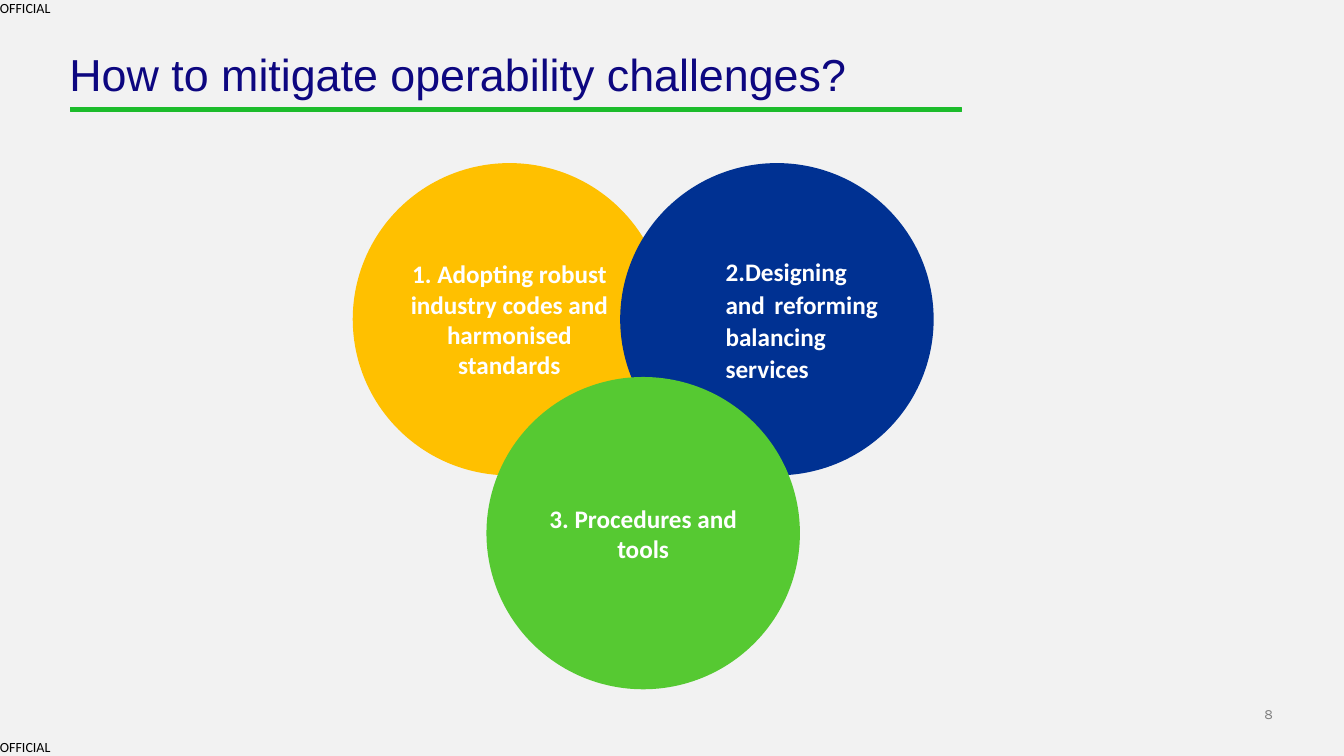
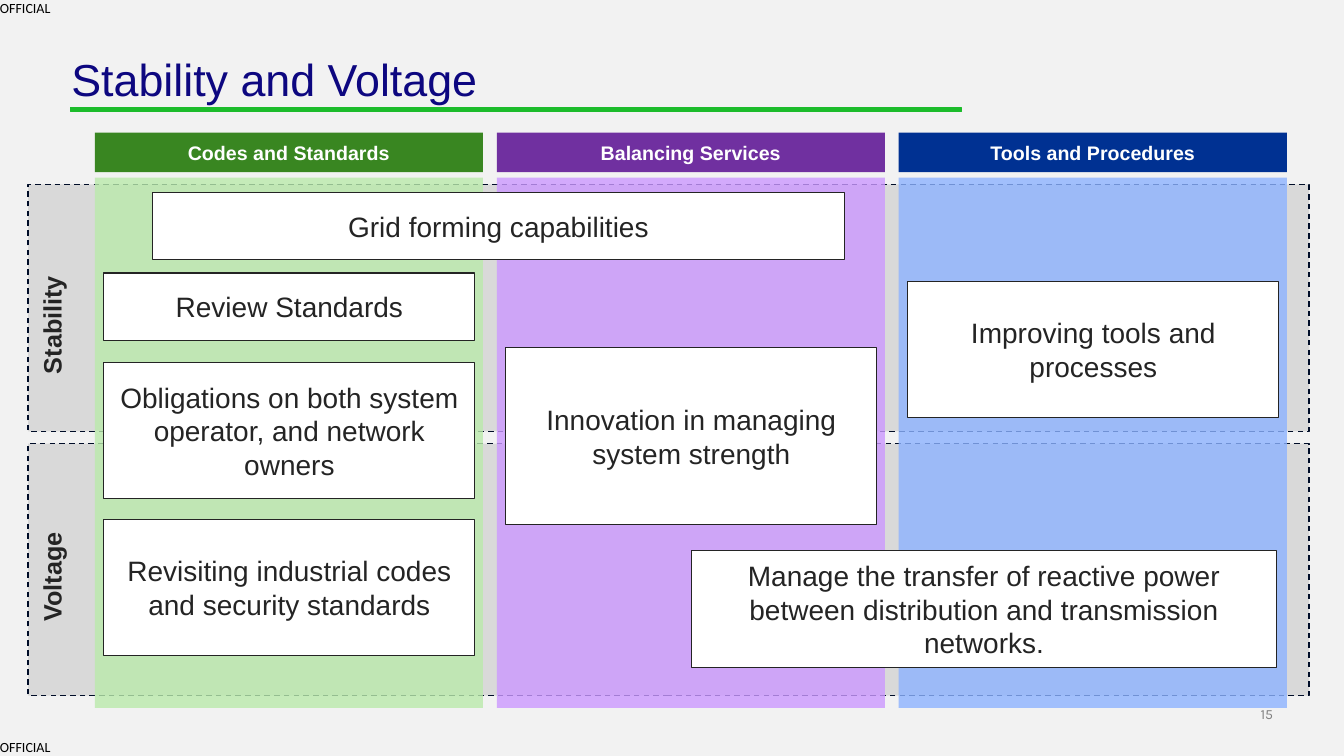
from dataclasses import dataclass

import lxml.etree
import pptx
import pptx.dml.color
import pptx.enum.dml
import pptx.enum.shapes
import pptx.enum.text
import pptx.oxml.ns
import pptx.shapes.autoshape
import pptx.slide
import pptx.util

Cm = pptx.util.Cm
Pt = pptx.util.Pt
RGBColor = pptx.dml.color.RGBColor
Align = pptx.enum.text.PP_ALIGN
Anchor = pptx.enum.text.MSO_ANCHOR
Preset = pptx.enum.shapes.MSO_SHAPE

# Colours
PAPER = RGBColor(0xF2, 0xF2, 0xF2)
BLACK = RGBColor(0x00, 0x00, 0x00)
WHITE = RGBColor(0xFF, 0xFF, 0xFF)
INK = RGBColor(0x24, 0x24, 0x24)
GREY = RGBColor(0x7F, 0x7F, 0x7F)
BAND_GREY = RGBColor(0xD9, 0xD9, 0xD9)
BAND_EDGE = RGBColor(0x00, 0x0D, 0x28)
TITLE_BLUE = RGBColor(0x0D, 0x07, 0x80)
RULE_GREEN = RGBColor(0x1C, 0xBC, 0x2B)
AMBER = RGBColor(0xFF, 0xC0, 0x00)
NAVY = RGBColor(0x00, 0x31, 0x92)
GREEN = RGBColor(0x56, 0xC9, 0x32)
DARK_GREEN = RGBColor(0x39, 0x86, 0x21)
PURPLE = RGBColor(0x70, 0x30, 0xA0)
PALE_GREEN = RGBColor(0xBA, 0xEA, 0xAB)
PALE_PURPLE = RGBColor(0xCC, 0x99, 0xFF)
PALE_BLUE = RGBColor(0x8D, 0xB3, 0xFF)


@dataclass(frozen=True)
class Area:
    """A rectangle in centimetres."""
    left: float
    top: float
    width: float
    height: float

    def lengths(self) -> tuple[int, int, int, int]:
        return Cm(self.left), Cm(self.top), Cm(self.width), Cm(self.height)


@dataclass(frozen=True)
class Style:
    font: str
    size: float
    colour: RGBColor
    bold: bool = False
    align: Align = Align.CENTER


@dataclass(frozen=True)
class Circle:
    text: str
    left: float
    top: float
    colour: RGBColor


@dataclass(frozen=True)
class Band:
    text: str
    top: float
    height: float
    label_middle: float


@dataclass(frozen=True)
class Column:
    heading: str
    colour: RGBColor
    tint: RGBColor


@dataclass(frozen=True)
class Card:
    text: str
    area: Area


TITLE = Style("Arial", 32, TITLE_BLUE, align=Align.LEFT)
MARKING = Style("Calibri", 10, BLACK, align=Align.LEFT)
NUMBER = Style("Karla", 10, GREY, align=Align.RIGHT)
CIRCLE_TEXT = Style("Calibri", 18, WHITE, bold=True)
BAND_TEXT = Style("Arial", 18, INK, bold=True)
HEADING = Style("Arial", 14, WHITE, bold=True)
CARD_TEXT = Style("Arial", 20, INK)

# Circles
CIRCLE_WIDTH, CIRCLE_HEIGHT = 7.9, 7.87
CIRCLE_LEFT, CIRCLE_TOP = 8.89, 4.11
CIRCLE_PITCH, CIRCLE_DROP = 6.74, 5.39
CIRCLES = [
    Circle("1. Adopting robust industry codes and harmonised standards",
           CIRCLE_LEFT, CIRCLE_TOP, AMBER),
    Circle("2.Designing and reforming balancing services",
           CIRCLE_LEFT + CIRCLE_PITCH, CIRCLE_TOP, NAVY),
    Circle("3. Procedures and tools",
           CIRCLE_LEFT + CIRCLE_PITCH / 2, CIRCLE_TOP + CIRCLE_DROP, GREEN),
]

# Matrix of bands, columns and cards
BANDS = [Band("Voltage", 11.18, 6.35, 14.54), Band("Stability", 4.65, 6.22, 8.19)]
BAND_LEFT, BAND_WIDTH = 0.71, 32.28
LABEL_CENTRE, LABEL_WIDTH, LABEL_HEIGHT = 1.3, 5.36, 1.85
COLUMNS = [
    Column("Codes and Standards", DARK_GREEN, PALE_GREEN),
    Column("Balancing Services", PURPLE, PALE_PURPLE),
    Column("Tools and Procedures", NAVY, PALE_BLUE),
]
COLUMN_LEFT, COLUMN_WIDTH, COLUMN_PITCH = 2.39, 9.78, 10.13
CARD_WIDTH, CARD_INSET = 9.35, 0.23
LOW, TALL = 1.7, 3.43


def column_left(index: int) -> float:
    return COLUMN_LEFT + index * COLUMN_PITCH


def column_card(text: str, index: int, top: float, height: float) -> Card:
    """A card that fits inside one column."""
    return Card(text, Area(column_left(index) + CARD_INSET, top, CARD_WIDTH, height))


CARDS = [
    Card("Grid forming capabilities", Area(3.84, 4.85, 17.45, LOW)),
    column_card("Innovation in managing system strength", 1, 8.76, 4.47),
    column_card("Review Standards", 0, 6.88, LOW),
    column_card("Improving tools and processes", 2, 7.09, TALL),
    column_card("Revisiting industrial codes and security standards", 0, 13.08, TALL),
    Card("Manage the transfer of reactive power between distribution and "
         "transmission networks.", Area(17.42, 13.87, 14.76, 2.95)),
    column_card("Obligations on both system operator, and network owners", 0, 9.14, TALL),
]


def write(shape: pptx.shapes.autoshape.Shape, text: str, style: Style) -> None:
    frame = shape.text_frame
    frame.word_wrap = True
    frame.vertical_anchor = Anchor.MIDDLE
    para = frame.paragraphs[0]
    para.text = text
    para.alignment = style.align
    para.font.name = style.font
    para.font.size = Pt(style.size)
    para.font.bold = style.bold
    para.font.color.rgb = style.colour


def add_box(page: pptx.slide.Slide, area: Area, fill: RGBColor,
            preset: Preset = Preset.RECTANGLE, edge: RGBColor | None = None,
            edge_width: float = 0.75) -> pptx.shapes.autoshape.Shape:
    box = page.shapes.add_shape(preset, *area.lengths())
    box.shadow.inherit = False
    box.fill.solid()
    box.fill.fore_color.rgb = fill
    if edge is None:
        box.line.fill.background()
    else:
        box.line.color.rgb = edge
        box.line.width = Pt(edge_width)
    return box


def add_text(page: pptx.slide.Slide, area: Area, text: str,
             style: Style) -> pptx.shapes.autoshape.Shape:
    """A text box without margins, set from the top."""
    box = page.shapes.add_textbox(*area.lengths())
    write(box, text, style)
    frame = box.text_frame
    frame.vertical_anchor = Anchor.TOP
    frame.margin_left = frame.margin_right = frame.margin_top = frame.margin_bottom = 0
    return box


def set_opacity(shape: pptx.shapes.autoshape.Shape, percent: int) -> None:
    colour = shape.fill._xPr.find(".//" + pptx.oxml.ns.qn("a:srgbClr"))
    alpha = lxml.etree.SubElement(colour, pptx.oxml.ns.qn("a:alpha"))
    alpha.set("val", str(percent * 1000))


def add_page(deck, title: str, title_left: float, title_top: float,
             number: int) -> pptx.slide.Slide:
    """A page with the shared background, markings, rule and title."""
    page = deck.slides.add_slide(deck.slide_layouts[6])
    page.background.fill.solid()
    page.background.fill.fore_color.rgb = PAPER
    add_text(page, Area(31.01, 17.78, 1.07, 0.43), str(number), NUMBER)
    for top in (18.62, 0):
        add_text(page, Area(0, top, 1.35, 0.43), "OFFICIAL", MARKING)
    add_box(page, Area(1.78, 2.72, 22.45, 0.1), RULE_GREEN, edge=RULE_GREEN)
    box = add_text(page, Area(title_left, title_top, 22.5, 1.22), title, TITLE)
    box.text_frame.paragraphs[0].line_spacing = 0.9
    return page


def add_circles(page: pptx.slide.Slide) -> None:
    for circle in CIRCLES:
        area = Area(circle.left, circle.top, CIRCLE_WIDTH, CIRCLE_HEIGHT)
        shape = add_box(page, area, circle.colour, Preset.OVAL)
        write(shape, circle.text, CIRCLE_TEXT)
        # The navy circle holds indented, justified text
        if circle.colour == NAVY:
            para = shape.text_frame.paragraphs[0]
            para.alignment = Align.JUSTIFY
            para.line_spacing = 1.07
            para.space_after = Pt(8)
            para._p.get_or_add_pPr().set("marL", str(Cm(1.25)))


def add_matrix(page: pptx.slide.Slide) -> None:
    # Dashed bands with upright labels
    for band in BANDS:
        area = Area(BAND_LEFT, band.top, BAND_WIDTH, band.height)
        box = add_box(page, area, BAND_GREY, edge=BAND_EDGE, edge_width=1)
        box.line.dash_style = pptx.enum.dml.MSO_LINE.DASH
        label_area = Area(LABEL_CENTRE - LABEL_WIDTH / 2,
                          band.label_middle - LABEL_HEIGHT / 2, LABEL_WIDTH, LABEL_HEIGHT)
        label = page.shapes.add_textbox(*label_area.lengths())
        label.rotation = 270
        write(label, band.text, BAND_TEXT)
    # Columns
    for index, column in enumerate(COLUMNS):
        left = column_left(index)
        heading = add_box(page, Area(left, 3.34, COLUMN_WIDTH, 1), column.colour)
        write(heading, column.heading, HEADING)
        body = add_box(page, Area(left, 4.48, COLUMN_WIDTH, 13.36), column.tint)
        set_opacity(body, 80)
    # Cards
    for card in CARDS:
        box = add_box(page, card.area, WHITE, edge=INK)
        write(box, card.text, CARD_TEXT)


def main() -> None:
    deck = pptx.Presentation()
    deck.slide_width, deck.slide_height = Cm(33.87), Cm(19.05)
    add_circles(add_page(deck, "How to mitigate operability challenges?", 1.75, 1.32, 8))
    add_matrix(add_page(deck, "Stability and Voltage", 1.8, 1.45, 15))
    deck.save("out.pptx")


if __name__ == "__main__":
    main()
